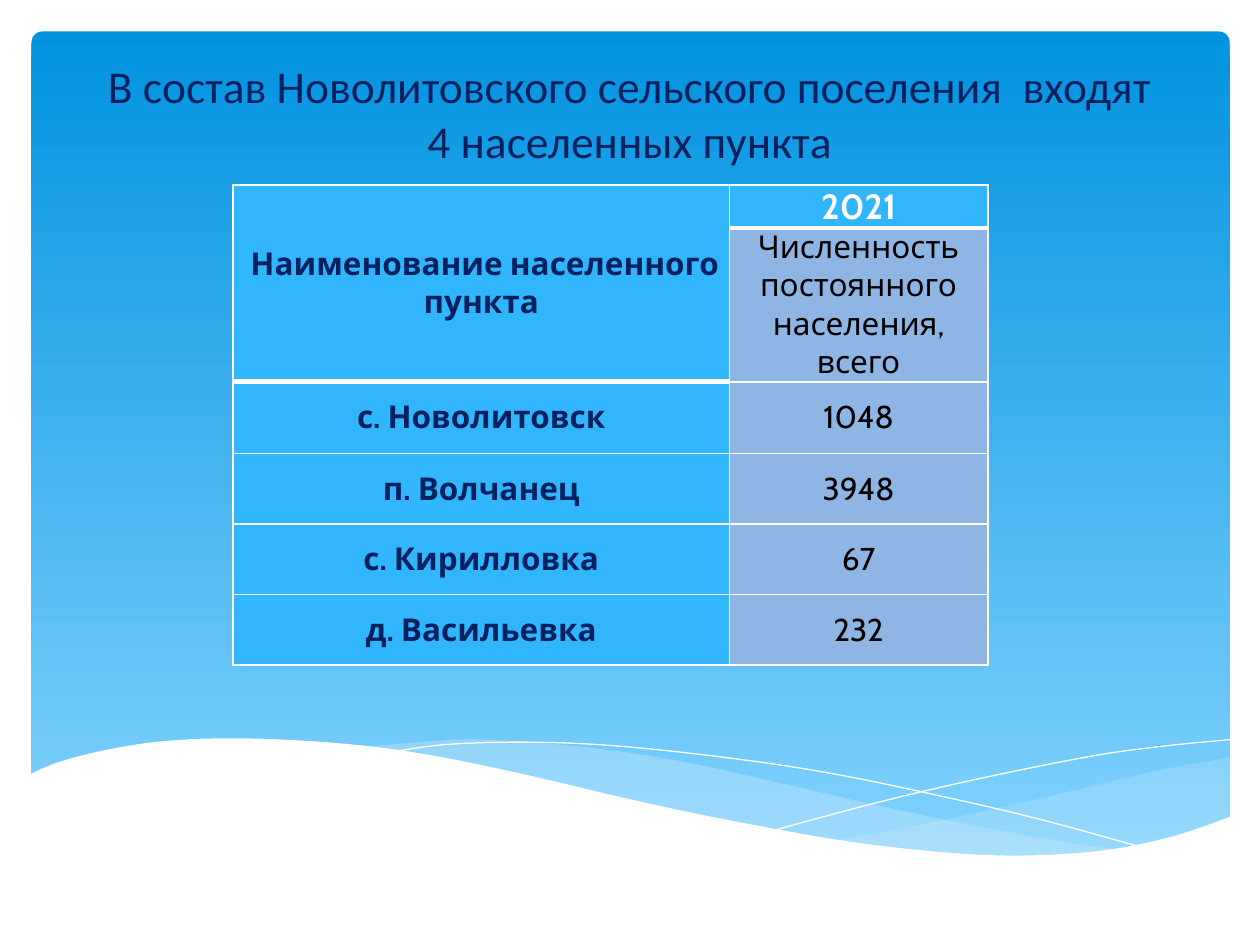
from dataclasses import dataclass

from lxml import etree
from pptx import Presentation
from pptx.dml.color import RGBColor
from pptx.enum.shapes import MSO_SHAPE
from pptx.enum.text import MSO_ANCHOR, PP_ALIGN
from pptx.oxml.ns import qn
from pptx.util import Inches, Pt

ROUND = MSO_SHAPE.ROUNDED_RECTANGLE
CENTER = PP_ALIGN.CENTER
MIDDLE, BOTTOM = MSO_ANCHOR.MIDDLE, MSO_ANCHOR.BOTTOM


@dataclass(frozen=True)
class Theme:
    navy: str = "002060"
    white: str = "FFFFFF"
    black: str = "000000"
    sky: str = "31B6FD"
    pale: str = "8FB5E5"
    mist: str = "C6E7FC"
    top: str = "0293E0"
    low: str = "83D3FE"
    head: str = "Calibri"
    body: str = "Cabin"
    title: int = 26
    year: int = 20
    cell: int = 18


def color(code):
    return RGBColor.from_string(code)


def smooth(knots, steps=6):
    """Points of a Catmull-Rom curve through the knots."""
    ends = [knots[0], *knots, knots[-1]]
    points = [knots[0]]
    for a, b, c, d in zip(ends, ends[1:], ends[2:], ends[3:]):
        for step in range(1, steps + 1):
            t = step / steps
            points.append(tuple(
                (2 * q + (r - p) * t + (2 * p - 5 * q + 4 * r - s) * t**2
                 + (3 * q - p - 3 * r + s) * t**3) / 2
                for p, q, r, s in zip(a, b, c, d)))
    return points


class Deck:
    def __init__(self, theme, slide):
        self.theme, self.slide = theme, slide

    def style(self, frame, text, anchor, **font):
        """Put centred text in a frame and format it."""
        frame.word_wrap = True
        frame.vertical_anchor = anchor
        para = frame.paragraphs[0]
        para.alignment = CENTER
        run = para.add_run()
        run.text = text
        run.font.color.rgb = color(font.pop("tint"))
        for name, value in font.items():
            setattr(run.font, name, value)

    def panel(self, box):
        shape = self.slide.shapes.add_shape(ROUND, *map(Inches, box))
        shape.adjustments[0] = 0.013
        shape.shadow.inherit = False
        shape.line.fill.background()
        shape.fill.gradient()
        shape.fill.gradient_angle = 270
        ends = (self.theme.top, 0), (self.theme.low, 1)
        for stop, (code, place) in zip(shape.fill.gradient_stops, ends):
            stop.color.rgb = color(code)
            stop.position = place

    def wave(self, *edges, fill=None, alpha=100):
        """Draw a filled area between smooth edges, or a thin open line."""
        spots = [(Inches(x), Inches(y)) for edge in edges for x, y in smooth(edge)]
        pen = self.slide.shapes.build_freeform(*spots[0])
        pen.add_line_segments(spots[1:], close=fill is not None)
        shape = pen.convert_to_shape()
        shape.shadow.inherit = False
        if fill is None:
            shape.fill.background()
            shape.line.color.rgb = color(self.theme.white)
            shape.line.width = Pt(0)
            return
        shape.line.fill.background()
        shape.fill.solid()
        shape.fill.fore_color.rgb = color(fill)
        if alpha < 100:
            tone = shape.fill._xPr.find(".//" + qn("a:srgbClr"))
            etree.SubElement(tone, qn("a:alpha"), val=str(alpha * 1000))

    def title(self, text, box):
        shape = self.slide.shapes.title
        for name, value in zip(("left", "top", "width", "height"), box):
            setattr(shape, name, Inches(value))
        self.style(shape.text_frame, text, BOTTOM, tint=self.theme.navy,
                   name=self.theme.head, size=Pt(self.theme.title), bold=False)
        # Bring the title in front of the backdrop
        self.slide.shapes._spTree.append(shape._element)

    def border(self, cell, widths):
        props = cell._tc.get_or_add_tcPr()
        for side, width in widths.items():
            line = etree.SubElement(props, qn("a:ln" + side), w=str(Pt(width)))
            fill = etree.SubElement(line, qn("a:solidFill"))
            etree.SubElement(fill, qn("a:srgbClr"), val=self.theme.white)

    def table(self, rows, box, cols, heights):
        theme = self.theme
        grid = self.slide.shapes.add_table(len(rows), len(cols), *map(Inches, box)).table
        for col, width in zip(grid.columns, cols):
            col.width = Inches(width)
        for row, height in zip(grid.rows, heights):
            row.height = Inches(height)
        grid.cell(0, 0).merge(grid.cell(1, 0))
        last = (1, 0)  # last heading row of each column
        for r, row in enumerate(rows):
            for c, text in enumerate(row):
                cell = grid.cell(r, c)
                year = (r, c) == (0, 1)
                key = c == 0 or year
                self.border(cell, {"L": 1, "R": 1,
                                   "T": 3 if r == last[c] + 1 else 1,
                                   "B": 3 if r == last[c] else 1})
                cell.fill.solid()
                cell.fill.fore_color.rgb = color(theme.sky if key else theme.pale)
                for side in ("left", "right", "top", "bottom"):
                    setattr(cell, "margin_" + side, 0)
                cell.vertical_anchor = MIDDLE
                if text:
                    tint = theme.white if year else theme.navy if key else theme.black
                    size = theme.year if year else theme.cell
                    self.style(cell.text_frame, text, MIDDLE, tint=tint,
                               name=theme.body, size=Pt(size), bold=key)


def main():
    show = Presentation()
    show.slide_width, show.slide_height = Inches(10), Inches(7.5)
    theme = Theme()
    deck = Deck(theme, show.slides.add_slide(show.slide_layouts[5]))

    # Backdrop with waves
    deck.panel((0.25, 0.25, 9.51, 6.6))
    deck.wave([(9.77, 6.01), (9.22, 6.11), (8.62, 6.25), (7.8, 6.44), (7.07, 6.59), (6.62, 6.67)],
              [(6.62, 6.67), (7.19, 6.74), (7.7, 6.79), (8.25, 6.79), (8.82, 6.75),
               (9.29, 6.65), (9.77, 6.49)], fill=theme.mist, alpha=29)
    deck.wave([(8.94, 6.75), (8.38, 6.67), (7.42, 6.49), (6.3, 6.24), (5.55, 6.07),
               (4.89, 5.96), (4.2, 5.89), (3.62, 5.87), (2.87, 5.93)],
              [(2.87, 5.93), (3.63, 6.04), (4.5, 6.24), (5.3, 6.42), (6.19, 6.6), (6.96, 6.72),
               (7.62, 6.79), (8.29, 6.8), (8.94, 6.75)], fill=theme.mist, alpha=40)
    deck.wave([(3.1, 5.97), (3.53, 5.91), (4.17, 5.89), (4.89, 5.92), (5.82, 6.02),
               (6.66, 6.15), (7.61, 6.35), (8.32, 6.52), (9.08, 6.73)])
    deck.wave([(6.14, 6.59), (6.96, 6.37), (7.77, 6.18), (8.67, 6), (9.25, 5.92), (9.76, 5.87)])
    deck.wave([(9.77, 6.48), (9.3, 6.64), (8.75, 6.75), (8.09, 6.79), (7.44, 6.76), (6.68, 6.67),
               (5.79, 6.51), (5.03, 6.35), (4.18, 6.15), (3.4, 5.99), (2.71, 5.9), (1.93, 5.86),
               (1.32, 5.88), (0.85, 5.95), (0.46, 6.05), (0.23, 6.15)],
              [(0.23, 7.31), (9.77, 7.31)], fill=theme.white)

    # Heading
    deck.title("В состав Новолитовского сельского поселения  входят 4 населенных пункта",
               (0.75, 0.36, 8.5, 1.02))

    # Population of the settlements
    rows = [
        (" Наименование населенного пункта", "2021"),
        ("", "Численность постоянного населения, всего"),
        ("с. Новолитовск", "1048"),
        ("п. Волчанец", "3948"),
        ("с. Кирилловка", "67"),
        ("д. Васильевка", "232"),
    ]
    deck.table(rows, (1.85, 1.47, 5.98, 3.47), (3.94, 2.05),
               (0.33, 0.78, 0.57, 0.56, 0.56, 0.56))
    show.save("out.pptx")


if __name__ == "__main__":
    main()
